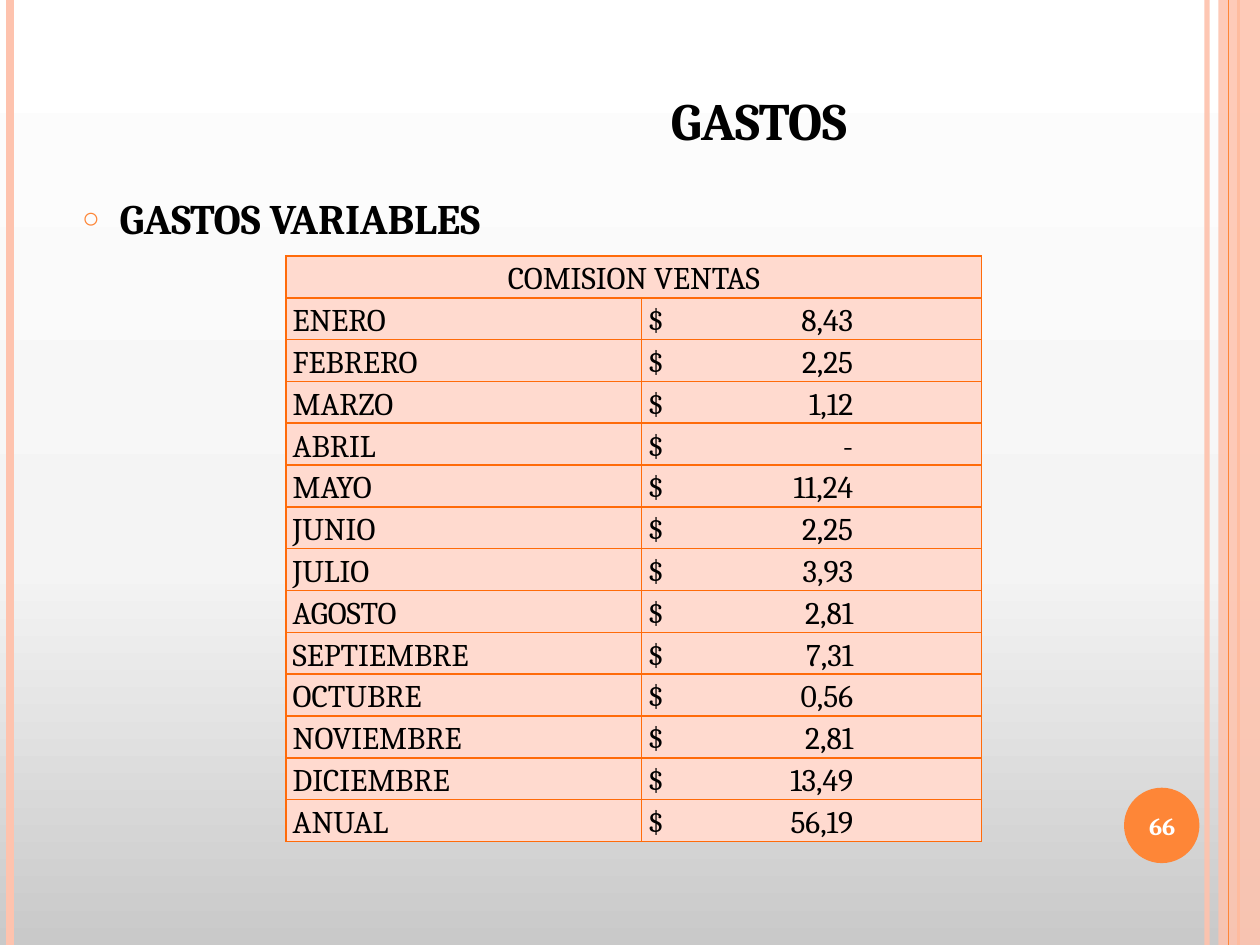
from copy import deepcopy

from lxml.etree import SubElement
from pptx import Presentation
from pptx.dml.color import RGBColor
from pptx.enum.shapes import MSO_CONNECTOR, MSO_SHAPE
from pptx.enum.text import MSO_ANCHOR, PP_ALIGN
from pptx.oxml.ns import qn
from pptx.util import Cm, Pt

COLORS = {
    "black": "000000", "white": "FFFFFF", "orange": "FE8637", "peach": "FEC3AE",
    "border": "FF6B0A", "cell": "FFDACF",
    "bg_low": "C9C9C9", "bg_mid": "F4F4F4",
}
FONT = "Cambria"
SLIDE_W, SLIDE_H = 25.4, 19.05
COMMISSIONS = [
    ("ENERO", "8,43"), ("FEBRERO", "2,25"), ("MARZO", "1,12"), ("ABRIL", "-"),
    ("MAYO", "11,24"), ("JUNIO", "2,25"), ("JULIO", "3,93"), ("AGOSTO", "2,81"),
    ("SEPTIEMBRE", "7,31"), ("OCTUBRE", "0,56"), ("NOVIEMBRE", "2,81"),
    ("DICIEMBRE", "13,49"), ("ANUAL", "56,19"),
]


def rgb(name):
    return RGBColor.from_string(COLORS[name])


def place(sp, box):
    sp.left, sp.top, sp.width, sp.height = (Cm(v) for v in box)


def write(tf, text, size=18, color="black", bold=False, align=PP_ALIGN.LEFT,
          anchor=MSO_ANCHOR.TOP, spacing=None, before=0):
    tf.vertical_anchor = anchor
    p = tf.paragraphs[0]
    p.alignment, p.space_before = align, Pt(before)
    if spacing:
        p.line_spacing = spacing
    r = p.add_run()
    r.text = text
    r.font.name, r.font.size, r.font.bold = FONT, Pt(size), bold
    r.font.color.rgb = rgb(color)
    return p


def set_alpha(sp, percent):
    clr = sp._element.spPr.find(".//" + qn("a:srgbClr"))
    SubElement(clr, qn("a:alpha")).set("val", str(percent * 1000))


def add_background(s):
    fill = s.background.fill
    fill.gradient()
    fill.gradient_angle = 90
    stops = s._element.find(".//" + qn("a:gsLst"))
    stops.append(deepcopy(stops[0]))
    for stop, (pos, name) in zip(fill.gradient_stops,
                                 [(0, "bg_low"), (0.4, "bg_mid"), (1, "white")]):
        stop.position = pos
        stop.color.rgb = rgb(name)


def add_stripe(s, x, color, width):
    line = s.shapes.add_connector(MSO_CONNECTOR.STRAIGHT, Cm(x), 0, Cm(x), Cm(SLIDE_H))
    line.line.color.rgb = rgb(color)
    line.line.width = Pt(width)
    SubElement(line._element.spPr, qn("a:effectLst"))
    return line


def add_plain_shape(s, kind, box, color):
    sp = s.shapes.add_shape(kind, *(Cm(v) for v in box))
    sp.shadow.inherit = False
    sp.fill.solid()
    sp.fill.fore_color.rgb = rgb(color)
    sp.line.fill.background()
    return sp


def add_frame(s):
    # Vertical stripes and band along the slide edges
    set_alpha(add_stripe(s, 24.33, "peach", 3), 93)
    add_stripe(s, 0.2, "peach", 4.5)
    add_stripe(s, 24.97, "orange", 1.5)
    band = add_plain_shape(s, MSO_SHAPE.RECTANGLE, (24.56, 0, 0.84, SLIDE_H), "peach")
    set_alpha(band, 87)
    add_stripe(s, 24.77, "orange", 0.75)


def add_page_number(s, box, number):
    x, y, size, _ = box
    add_plain_shape(s, MSO_SHAPE.OVAL, box, "orange")
    label = s.shapes.add_textbox(Cm(x - 0.08), Cm(y + 0.05), Cm(size + 0.18), Cm(1.45))
    label.text_frame.word_wrap = True
    write(label.text_frame, number, size=14, color="white", bold=True,
          align=PP_ALIGN.CENTER, anchor=MSO_ANCHOR.MIDDLE)


def add_title(s, box, text):
    sp = s.shapes.title
    place(sp, box)
    p = write(sp.text_frame, text, size=30, bold=True,
              align=PP_ALIGN.CENTER, anchor=MSO_ANCHOR.BOTTOM)
    p._p.get_or_add_pPr().set("marL", str(Cm(3.5)))
    p.runs[0].font._element.set("cap", "small")


def add_list(s, box, text):
    sp = s.placeholders[1]
    place(sp, box)
    pPr = write(sp.text_frame, text, size=24, bold=True, before=6)._p.get_or_add_pPr()
    pPr.set("marL", str(Cm(0.76)))
    pPr.set("indent", str(Cm(-0.76)))
    SubElement(SubElement(pPr, qn("a:buClr")), qn("a:srgbClr")).set("val", COLORS["orange"])
    SubElement(pPr, qn("a:buSzPct")).set("val", "70000")
    SubElement(pPr, qn("a:buChar")).set("char", "○")


def format_cell(cell):
    cell.fill.solid()
    cell.fill.fore_color.rgb = rgb("cell")
    cell.margin_left = cell.margin_right = Cm(0.13)
    cell.margin_top = cell.margin_bottom = 0
    cell.vertical_anchor = MSO_ANCHOR.BOTTOM
    tcPr = cell._tc.get_or_add_tcPr()
    for i, side in enumerate(("a:lnL", "a:lnR", "a:lnT", "a:lnB")):
        ln = SubElement(tcPr, qn(side), w=str(Pt(1)))
        fill = SubElement(ln, qn("a:solidFill"))
        SubElement(fill, qn("a:srgbClr")).set("val", COLORS["border"])
        tcPr.insert(i, ln)


def add_commission_table(s, box, heading, rows):
    frame = s.shapes.add_table(len(rows) + 1, 2, *(Cm(v) for v in box))
    table = frame.table
    table.columns[0].width, table.columns[1].width = Cm(7.16), Cm(box[2] - 7.16)
    for row in table.rows:
        row.height = Cm(box[3] / (len(rows) + 1))
    for cell in table.iter_cells():
        format_cell(cell)
    table.cell(0, 0).merge(table.cell(0, 1))

    def fill_cell(row, col, text, align=PP_ALIGN.LEFT):
        return write(table.cell(row, col).text_frame, text, align=align,
                     anchor=MSO_ANCHOR.BOTTOM, spacing=1.15)

    fill_cell(0, 0, heading, PP_ALIGN.CENTER)
    for i, (month, amount) in enumerate(rows, 1):
        fill_cell(i, 0, month)
        # Amounts line up on a right tab stop
        pPr = fill_cell(i, 1, "$\t" + amount)._p.get_or_add_pPr()
        tabs = SubElement(pPr, qn("a:tabLst"))
        SubElement(tabs, qn("a:tab"), pos=str(Cm(4.14)), algn="r")


def main():
    prs = Presentation()
    prs.slide_width, prs.slide_height = Cm(SLIDE_W), Cm(SLIDE_H)
    s = prs.slides.add_slide(prs.slide_layouts[1])
    add_background(s)
    add_frame(s)
    add_title(s, (1.4, 0, 20.75, 3.18), "GASTOS")
    add_list(s, (1.4, 3.76, 20.75, 13.54), "GASTOS VARIABLES")
    add_commission_table(s, (5.77, 5.16, 14.02, 11.8), "COMISION VENTAS", COMMISSIONS)
    add_page_number(s, (22.66, 15.88, 1.52, 1.52), "66")
    prs.save("out.pptx")


if __name__ == "__main__":
    main()
